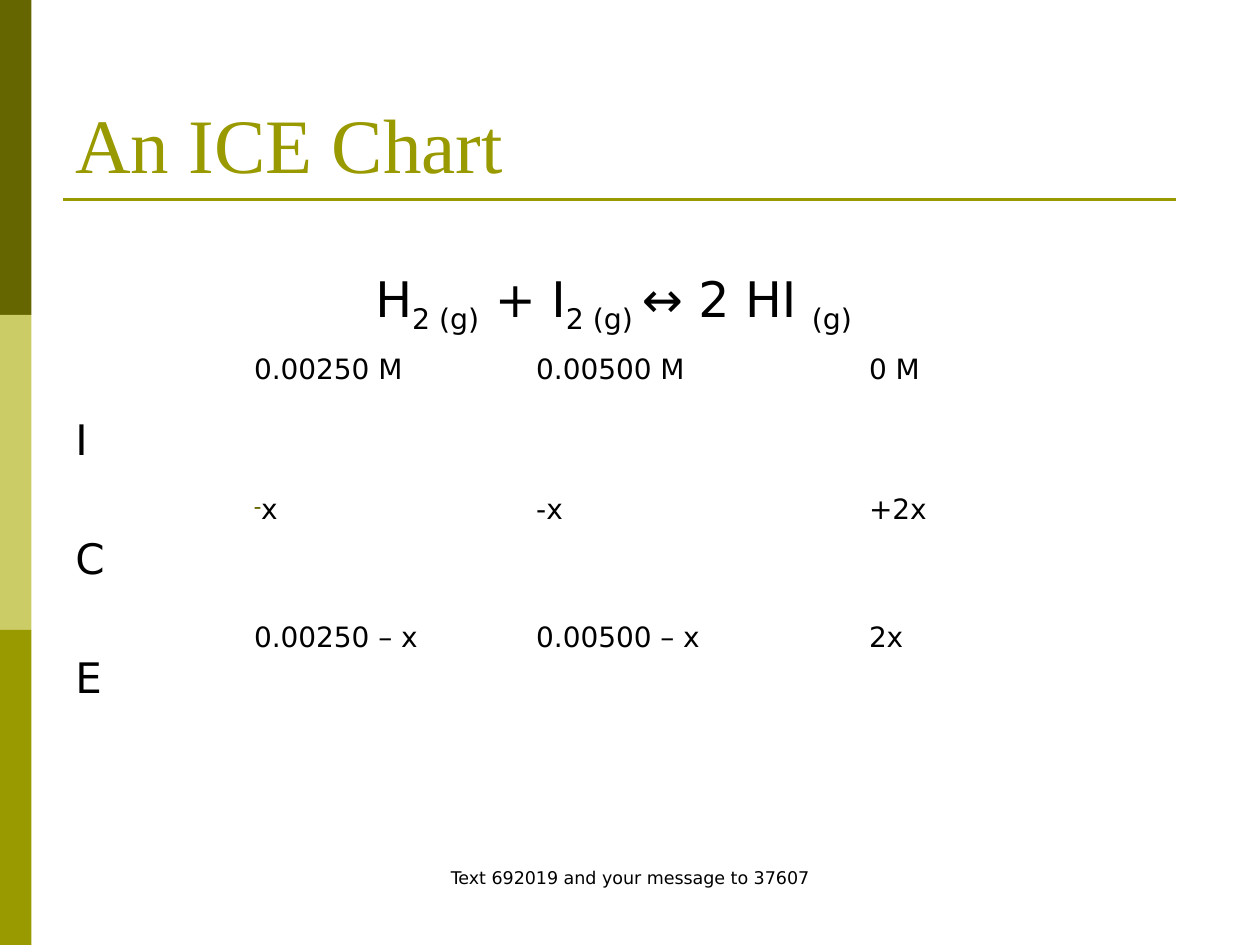
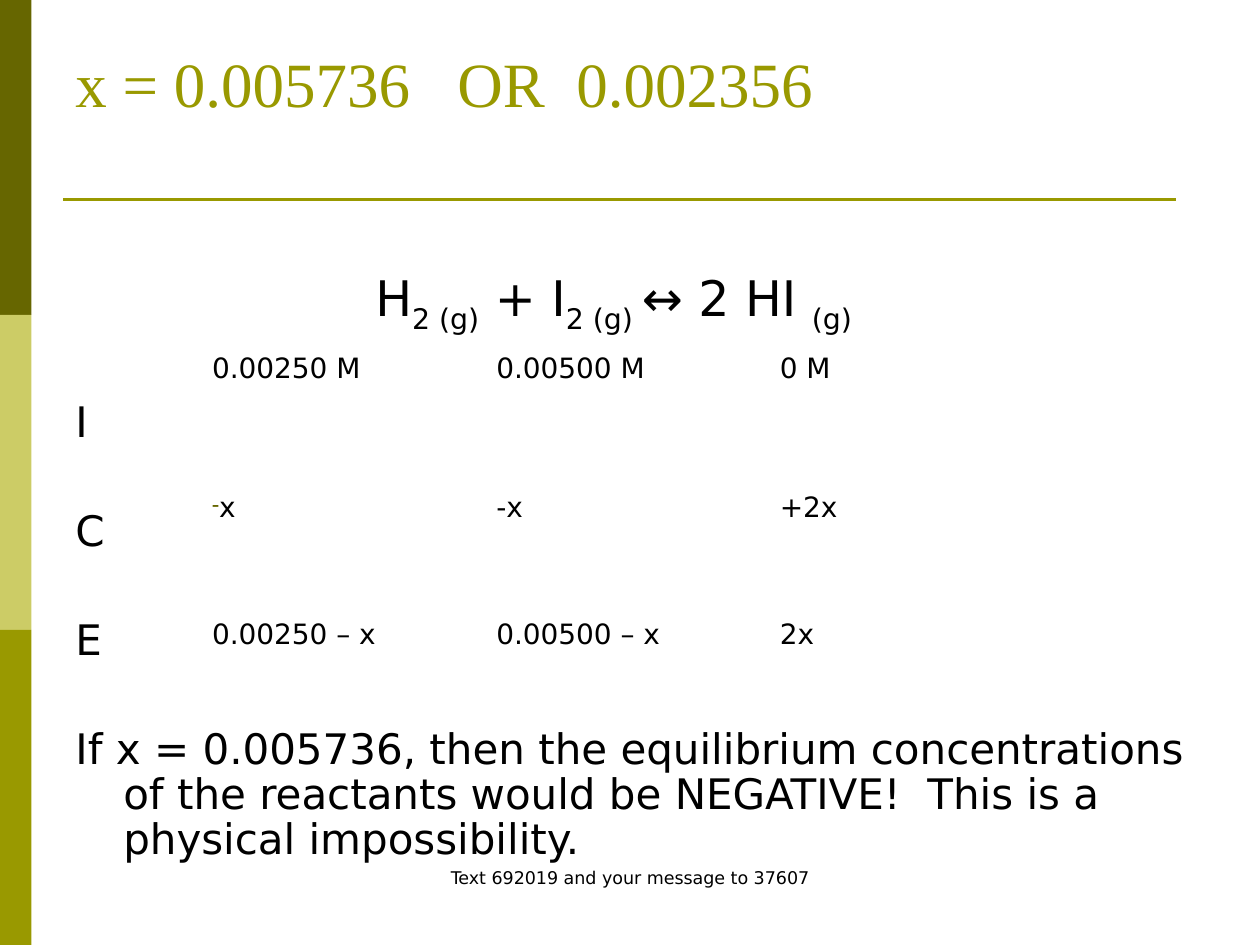
from dataclasses import dataclass

from lxml import etree
from pptx import Presentation
from pptx.dml.color import RGBColor
from pptx.enum.shapes import MSO_CONNECTOR, MSO_SHAPE
from pptx.enum.text import MSO_ANCHOR, PP_ALIGN
from pptx.oxml.ns import qn
from pptx.util import Inches, Pt

STRAIGHT = MSO_CONNECTOR.STRAIGHT
RECTANGLE = MSO_SHAPE.RECTANGLE
TOP, BOTTOM = MSO_ANCHOR.TOP, MSO_ANCHOR.BOTTOM
LEFT, CENTER = PP_ALIGN.LEFT, PP_ALIGN.CENTER

COLUMNS, ROWS = 120, 90  # grid of twelfths of an inch
BLANK_LAYOUT = 6


@dataclass(frozen=True)
class Theme:
    dark: str = "666600"
    light: str = "CCCC66"
    olive: str = "999900"
    ink: str = "000000"
    title_font: str = "Times New Roman"
    body_font: str = "DejaVu Sans"
    equation_size: int = 28
    body_size: int = 24
    table_size: int = 16
    footer_size: int = 10
    rule_width: float = 1.5
    line_height: float = 1.164  # line height of the body font, in ems
    hanging: float = 0.38


EQUATION = [("H", 0), ("2 (g)", -25), (" + I", 0), ("2 (g) ", -25),
            ("↔ 2 HI ", 0), ("(g)", -25)]
ICE_ROWS = [
    ["0.00250 M", "", "", "0.00500 M", "", "0 M"],
    ["x", "", "", "-x", "", "+2x"],
    ["0.00250 – x", "", "", "0.00500 – x", "", "2x"],
]
MERGES = [(0, 1, 2), (1, 0, 1), (2, 0, 1)]  # row, first column, last column
BULLET_CELL = (1, 0)
FOOTER = "Text 692019 and your message to 37607"


class SlideBuilder:
    """Holds the deck, its theme and the page being drawn."""

    def __init__(self, theme):
        self.theme = theme
        self.deck = Presentation()
        self.deck.slide_width = Inches(10)
        self.deck.slide_height = Inches(7.5)
        self.page = None

    def x(self, columns):
        return round(self.deck.slide_width * columns / COLUMNS)

    def y(self, rows):
        return round(self.deck.slide_height * rows / ROWS)

    def area(self, left, top, width, height):
        return self.x(left), self.y(top), self.x(width), self.y(height)

    def new_page(self):
        layout = self.deck.slide_layouts[BLANK_LAYOUT]
        self.page = self.deck.slides.add_slide(layout)
        theme = self.theme
        # Side bands and title rule
        for index, color in enumerate((theme.dark, theme.light, theme.olive)):
            self.band(0, index * ROWS / 3, 3, ROWS / 3, color)
        self.rule(6, 112, 19, theme.olive)
        self.footer()

    def band(self, left, top, width, height, color):
        box = self.page.shapes.add_shape(
            RECTANGLE, *self.area(left, top, width, height))
        box.shadow.inherit = False
        box.fill.solid()
        box.fill.fore_color.rgb = RGBColor.from_string(color)
        box.line.fill.background()

    def rule(self, start, end, row, color):
        line = self.page.shapes.add_connector(
            STRAIGHT, self.x(start), self.y(row), self.x(end), self.y(row))
        line.line.color.rgb = RGBColor.from_string(color)
        line.line.width = Pt(self.theme.rule_width)
        etree.SubElement(line._element.spPr, qn("a:effectLst"))

    def text_frame(self, left, top, width, height, anchor=TOP):
        box = self.page.shapes.add_textbox(
            *self.area(left, top, width, height))
        frame = box.text_frame
        frame.word_wrap = True
        frame.vertical_anchor = anchor
        return frame

    def span(self, para, text, size, font=None, color=None, baseline=0):
        span = para.add_run()
        span.text = text
        span.font.size = Pt(size)
        span.font.name = font or self.theme.body_font
        span.font.color.rgb = RGBColor.from_string(color or self.theme.ink)
        if baseline:
            span.font._element.set("baseline", str(baseline * 1000))

    def title(self, text, size, anchor):
        frame = self.text_frame(6, 3.6, 108, 15, anchor)
        self.span(frame.paragraphs[0], text, size,
                  self.theme.title_font, self.theme.olive)

    def footer(self):
        para = self.text_frame(41, 82, 38, 6).paragraphs[0]
        para.alignment = CENTER
        self.span(para, FOOTER, self.theme.footer_size)

    def indent(self, para, left, first):
        props = para._p.get_or_add_pPr()
        props.set("marL", str(Inches(left)))
        props.set("indent", str(Inches(first)))

    def body(self, lines, height, line_spacing):
        theme = self.theme
        frame = self.text_frame(6, 25, 111, height)
        # Equation
        para = frame.paragraphs[0]
        para.line_spacing = line_spacing
        self.indent(para, 2.38, 0)
        for text, baseline in EQUATION:
            self.span(para, text, theme.equation_size, baseline=baseline)
        # Each line stands one empty line below the one before
        before_size = theme.equation_size
        for text in lines:
            para = frame.add_paragraph()
            para.alignment = LEFT
            para.line_spacing = line_spacing
            ems = before_size * (line_spacing + 0.2) + theme.body_size * 0.2
            para.space_before = Pt(round(ems * theme.line_height, 1))
            self.indent(para, theme.hanging, -theme.hanging)
            self.span(para, text, theme.body_size)
            before_size = theme.body_size

    def bullet(self, para, mark, color, percent):
        props = para._p.get_or_add_pPr()
        fill = etree.SubElement(props, qn("a:buClr"))
        etree.SubElement(fill, qn("a:srgbClr"), val=color)
        etree.SubElement(props, qn("a:buSzPct"), val=str(percent * 1000))
        etree.SubElement(props, qn("a:buChar"), char=mark)

    def ice_table(self, left, top, widths, heights):
        frame = self.page.shapes.add_table(
            len(heights), len(widths),
            *self.area(left, top, sum(widths), sum(heights)))
        table = frame.table
        table.first_row = table.horz_banding = False
        for column, width in zip(table.columns, widths):
            column.width = self.x(width)
        for row, height in zip(table.rows, heights):
            row.height = self.y(height)
        for row, values in enumerate(ICE_ROWS):
            for column, value in enumerate(values):
                cell = table.cell(row, column)
                cell.fill.background()
                self.clear_borders(cell)
                para = cell.text_frame.paragraphs[0]
                if (row, column) == BULLET_CELL:
                    self.bullet(para, "-", self.theme.dark, 75)
                if value:
                    self.span(para, value, self.theme.table_size)
        for row, first, last in MERGES:
            table.cell(row, first).merge(table.cell(row, last))

    def clear_borders(self, cell):
        props = cell._tc.get_or_add_tcPr()
        for index, side in enumerate(("lnL", "lnR", "lnT", "lnB")):
            border = etree.Element(qn("a:" + side), w="0")
            etree.SubElement(border, qn("a:noFill"))
            props.insert(index, border)


def main():
    builder = SlideBuilder(Theme())

    # ICE chart
    builder.new_page()
    builder.title("An ICE Chart", 44, BOTTOM)
    builder.body(["I", "C", "E"], 54, 1.0)
    builder.ice_table(23, 33.1, [19, 2.75, 5, 19.6, 12.1, 23.6],
                      [13.3, 12.2, 12.2])

    # Two roots, one of them impossible
    builder.new_page()
    builder.title("x = 0.005736   OR  0.002356", 36, TOP)
    builder.body(["I", "C", "E",
                  "If x = 0.005736, then the equilibrium concentrations of "
                  "the reactants would be NEGATIVE!  This is a physical "
                  "impossibility."], 58, 0.9)
    builder.ice_table(19, 33, [19.2, 2.8, 5, 19.8, 7.2, 29],
                      [13.2, 12.1, 12.1])

    builder.deck.save("out.pptx")


if __name__ == "__main__":
    main()
